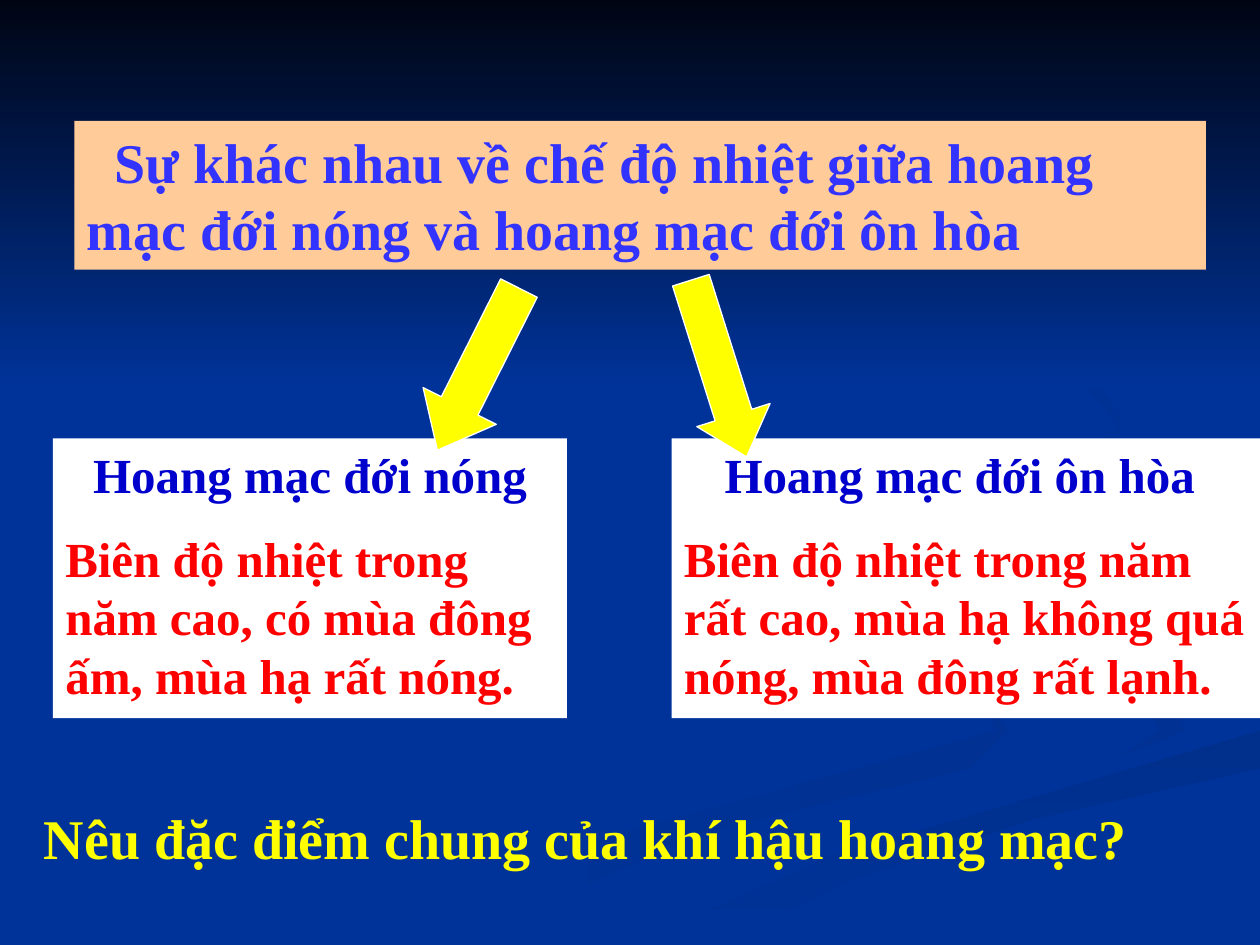
from dataclasses import dataclass
from typing import Optional

from pptx import Presentation
from pptx.dml.color import RGBColor
from pptx.enum import shapes, text
from pptx.util import Inches, Pt

NAVY = RGBColor(0x00, 0x33, 0x99)
DUSK = RGBColor(0x00, 0x31, 0x93)
DEEP = RGBColor(0x00, 0x2F, 0x8C)
NIGHT = RGBColor(0x00, 0x05, 0x14)
PEACH = RGBColor(0xFF, 0xCC, 0x99)
WHITE = RGBColor(0xFF, 0xFF, 0xFF)
YELLOW = RGBColor(0xFF, 0xFF, 0x00)
VIOLET = RGBColor(0x33, 0x33, 0xFF)
BLUE = RGBColor(0x00, 0x00, 0xCC)
RED = RGBColor(0xFF, 0x00, 0x00)
FONT = "Times New Roman"


@dataclass
class Wave:
    """Background outline; points are in tenths of an inch."""
    pts: list
    start: RGBColor
    end: RGBColor
    angle: int  # clockwise


@dataclass
class Para:
    words: str
    size: int
    color: RGBColor
    center: bool = False
    before: int = 0
    indent: float = 0


@dataclass
class Box:
    at: tuple
    paras: list
    fill: Optional[RGBColor] = None
    wrap: bool = True


@dataclass
class Arrow:
    at: tuple
    turn: float
    head: float


WAVES = [
    Wave([(78, 55), (79, 58), (68, 61), (46, 67), (30, 75), (36, 75),
          (56, 66), (77, 61), (80, 58)], NAVY, DUSK, 0),
    Wave([(72, 46), (75, 50), (84, 54), (91, 56), (92, 58), (89, 60.5),
          (94, 58), (93, 55), (83, 52), (75, 49)], NAVY, DUSK, 45),
    Wave([(50, 75), (57, 75), (67, 70), (82, 65), (100, 61), (100, 58),
          (83, 63), (66, 68)], DEEP, NAVY, 90),
    Wave([(68, 43), (87, 38), (89, 33), (85, 28), (76, 23), (84, 28),
          (89, 34), (84, 38), (64, 42), (58, 46), (62, 50), (59, 47)],
         DEEP, NAVY, 45),
]

BOXES = [
    Box((0.59, 0.96, 8.98, 1.18), [
        Para("Sự khác nhau về chế độ nhiệt giữa hoang mạc đới nóng "
             "và hoang mạc đới ôn hòa", 32, VIOLET, indent=0.22)], PEACH),
    Box((0.42, 3.48, 4.08, 2.22), [
        Para("Hoang mạc đới nóng", 28, BLUE, center=True),
        Para("Biên độ nhiệt trong năm cao, có mùa đông ấm, mùa hạ rất nóng.",
             28, RED, before=14)], WHITE),
    Box((5.33, 3.48, 4.67, 2.22), [
        Para("Hoang mạc đới ôn hòa ", 28, BLUE, center=True),
        Para("Biên độ nhiệt trong năm rất cao, mùa hạ không quá nóng, "
             "mùa đông rất lạnh.", 28, RED, before=14)], WHITE),
]
ARROWS = [Arrow((3.47, 2.21, 0.65, 1.44), 26.7, 0.605),
          Arrow((5.4, 2.19, 0.61, 1.47), 342.5, 0.57)]
ASK = Box((0.25, 6.33, 8.88, 0.64), [
    Para("Nêu đặc điểm chung của khí hậu hoang mạc?", 32, YELLOW)], wrap=False)


def shade(shape, start: RGBColor, end: RGBColor, angle: int) -> None:
    shape.shadow.inherit = False
    shape.line.fill.background()
    shape.fill.gradient()
    shape.fill.gradient_angle = -angle % 360
    for stop, color in zip(shape.fill.gradient_stops, (start, end)):
        stop.color.rgb = color


def draw_wave(slide, wave: Wave) -> None:
    pen = slide.shapes.build_freeform(*wave.pts[0], scale=Inches(0.1))
    pen.add_line_segments(wave.pts[1:], close=True)
    shade(pen.convert_to_shape(), wave.start, wave.end, wave.angle)


def draw_box(slide, box: Box) -> None:
    at = [Inches(v) for v in box.at]
    if box.fill is None:
        shape = slide.shapes.add_textbox(*at)
    else:
        shape = slide.shapes.add_shape(shapes.MSO_SHAPE.RECTANGLE, *at)
        shape.shadow.inherit = False
        shape.fill.solid()
        shape.fill.fore_color.rgb = box.fill
        shape.line.fill.background()
    frame = shape.text_frame
    frame.word_wrap = box.wrap
    frame.vertical_anchor = text.MSO_ANCHOR.TOP
    for i, item in enumerate(box.paras):
        para = frame.paragraphs[0] if i == 0 else frame.add_paragraph()
        para.alignment = text.PP_ALIGN.CENTER if item.center else text.PP_ALIGN.LEFT
        para.space_before = Pt(item.before)
        if item.indent:
            para._p.get_or_add_pPr().set("indent", str(Inches(item.indent)))
        run = para.add_run()
        run.text = item.words
        run.font.name = FONT
        run.font.size = Pt(item.size)
        run.font.bold = True
        run.font.color.rgb = item.color


def draw_arrow(slide, arrow: Arrow) -> None:
    at = [Inches(v) for v in arrow.at]
    shape = slide.shapes.add_shape(shapes.MSO_SHAPE.DOWN_ARROW, *at)
    shape.adjustments[0] = 0.5
    shape.adjustments[1] = arrow.head
    shape.rotation = arrow.turn
    shape.shadow.inherit = False
    shape.fill.solid()
    shape.fill.fore_color.rgb = YELLOW
    shape.line.color.rgb = WHITE
    shape.line.width = Pt(0.75)


def main() -> None:
    deck = Presentation()
    deck.slide_width, deck.slide_height = Inches(10), Inches(7.5)
    slide = deck.slides.add_slide(deck.slide_layouts[6])

    # Background: waves under a night sky
    slide.background.fill.solid()
    slide.background.fill.fore_color.rgb = NAVY
    for wave in WAVES:
        draw_wave(slide, wave)
    sky = slide.shapes.add_shape(shapes.MSO_SHAPE.RECTANGLE, 0, 0,
                                 deck.slide_width, Inches(3.08))
    shade(sky, NIGHT, NAVY, 90)

    # Topic, its two cases and the arrows to them
    for box in BOXES:
        draw_box(slide, box)
    for arrow in ARROWS:
        draw_arrow(slide, arrow)

    # Closing question
    draw_box(slide, ASK)
    deck.save("out.pptx")


if __name__ == "__main__":
    main()
